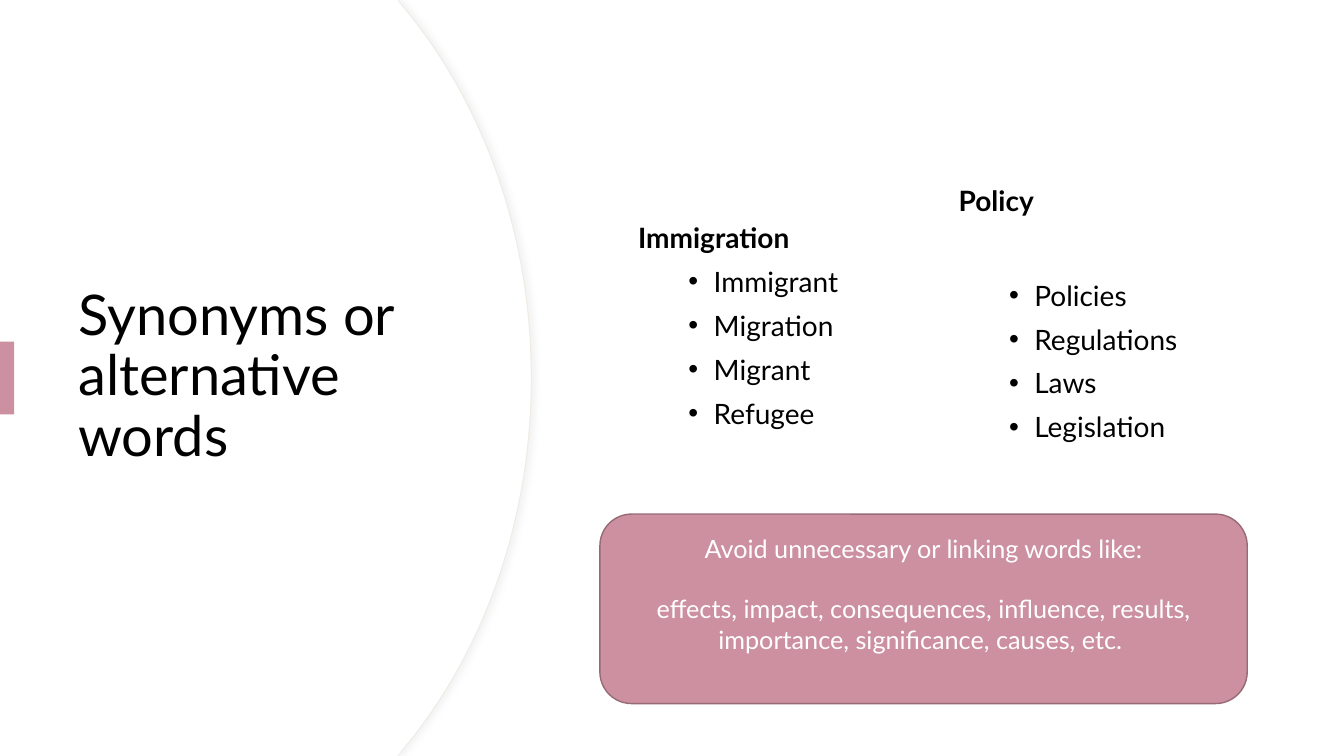
from dataclasses import dataclass

from lxml.etree import SubElement
from pptx import Presentation
from pptx.dml.color import RGBColor
from pptx.enum.shapes import MSO_SHAPE
from pptx.enum.text import MSO_ANCHOR, PP_ALIGN
from pptx.oxml.ns import qn
from pptx.shapes.autoshape import Shape
from pptx.slide import Slide
from pptx.text.text import TextFrame, _Paragraph
from pptx.util import Inches, Pt


@dataclass(frozen=True)
class Theme:
    font: str = "Lato"
    ink: str = "000000"
    paper: str = "FFFFFF"
    rose: str = "CC90A0"
    rose_edge: str = "976B76"
    arc_edge: str = "F0EBE4"
    arc_shadow: str = "D9D9D9"
    title_size: int = 40
    list_size: int = 20
    callout_size: int = 18


@dataclass(frozen=True)
class WordList:
    left: float
    top: float
    heading: str
    words: tuple[str, ...]
    first_gap: float
    bottom_inset: float


@dataclass(frozen=True)
class Panel:
    left: float
    top: float
    width: float
    height: float
    fill: str


THEME = Theme()
SLIDE_WIDTH = 13.33
SLIDE_HEIGHT = 7.5
BACKDROP = Panel(0, 0, SLIDE_WIDTH, SLIDE_HEIGHT, THEME.paper)
ACCENT = Panel(0, 3.39, 0.14, 0.72, THEME.rose)
WORD_LISTS = (
    WordList(6.23, 1.12, "Immigration",
             ("Immigrant", "Migration", "Migrant", "Refugee"), 5, 0.42),
    WordList(9.41, 1.22, "Policy",
             ("Policies", "Regulations", "Laws", "Legislation"), 41, 0.85),
)


def paint(shape: Shape, fill: str, line: str | None = None, width: float = 0.75) -> None:
    shape.shadow.inherit = False
    shape.fill.solid()
    shape.fill.fore_color.rgb = RGBColor.from_string(fill)
    if line:
        shape.line.color.rgb = RGBColor.from_string(line)
        shape.line.width = Pt(width)
    else:
        shape.line.fill.background()


def write(para: _Paragraph, text: str, *, size: float, color: str = THEME.ink,
          bold: bool = False, align: PP_ALIGN = PP_ALIGN.LEFT,
          spacing: float = 1.0, before: float = 0) -> None:
    para.alignment = align
    para.line_spacing = spacing
    para.space_before = Pt(before)
    span = para.add_run()
    span.text = text
    span.font.name = THEME.font
    span.font.size = Pt(size)
    span.font.bold = bold
    span.font.color.rgb = RGBColor.from_string(color)


def prepare_frame(shape: Shape, bottom_inset: float = 0.05) -> TextFrame:
    frame = shape.text_frame
    frame.word_wrap = True
    frame.vertical_anchor = MSO_ANCHOR.MIDDLE
    frame.margin_bottom = Inches(bottom_inset)
    return frame


def add_bullet(para: _Paragraph) -> None:
    properties = para._p.get_or_add_pPr()
    properties.set("lvl", "1")
    properties.set("marL", str(Inches(0.75)))
    properties.set("indent", str(Inches(-0.25)))
    SubElement(properties, qn("a:buFont")).set("typeface", "Arial")
    SubElement(properties, qn("a:buChar")).set("char", "•")


def add_soft_shadow(shape: Shape) -> None:
    effects = shape._element.spPr.find(qn("a:effectLst"))
    shadow = SubElement(effects, qn("a:outerShdw"), blurRad=str(Pt(4)),
                        dist=str(Pt(3)), dir="0", algn="l", rotWithShape="0")
    color = SubElement(shadow, qn("a:srgbClr"), val=THEME.arc_shadow)
    SubElement(color, qn("a:alpha"), val="30000")


def bend(shape: Shape, first: int, count: int) -> None:
    lines = list(shape._element.iter(qn("a:lnTo")))
    for start in range(first, first + 3 * count, 3):
        group = lines[start:start + 3]
        outline = group[0].getparent()
        curve = outline.makeelement(qn("a:cubicBezTo"), {})
        outline.insert(outline.index(group[0]), curve)
        for line in group:
            curve.append(line[0])
            outline.remove(line)


def add_arc_panel(slide: Slide, reach: float) -> Shape:
    upper = [(3.94, 0), (reach - 1.26, 0.08), (reach - 0.48, 1.02), (reach, 2.32)]
    lower = [(x, SLIDE_HEIGHT - y) for x, y in reversed(upper)]
    outline = upper + [(reach, SLIDE_HEIGHT / 2)] + lower + [(0, SLIDE_HEIGHT)]
    builder = slide.shapes.build_freeform(0, 0)
    builder.add_line_segments([(Inches(x), Inches(y)) for x, y in outline], close=True)
    panel = builder.convert_to_shape()
    bend(panel, 2, 2)
    return panel


def add_panel(slide: Slide, panel: Panel) -> None:
    shape = slide.shapes.add_shape(MSO_SHAPE.RECTANGLE, Inches(panel.left), Inches(panel.top),
                                   Inches(panel.width), Inches(panel.height))
    paint(shape, panel.fill)


def add_title(slide: Slide) -> None:
    box = slide.shapes.add_textbox(Inches(0.68), Inches(1.27), Inches(3.94), Inches(4.95))
    write(prepare_frame(box).paragraphs[0], "Synonyms or alternative words",
          size=THEME.title_size, spacing=0.9)


def add_word_list(slide: Slide, item: WordList) -> None:
    box = slide.shapes.add_textbox(Inches(item.left), Inches(item.top),
                                   Inches(2.61), Inches(4.55))
    frame = prepare_frame(box, item.bottom_inset)
    write(frame.paragraphs[0], item.heading, size=THEME.list_size,
          bold=True, spacing=1.1, before=10)
    for index, word in enumerate(item.words):
        para = frame.add_paragraph()
        write(para, word, size=THEME.list_size, spacing=1.1,
              before=5 if index else item.first_gap)
        add_bullet(para)


def add_callout(slide: Slide) -> None:
    box = slide.shapes.add_shape(MSO_SHAPE.ROUNDED_RECTANGLE, Inches(5.95), Inches(5.1),
                                 Inches(6.42), Inches(1.88))
    paint(box, THEME.rose, THEME.rose_edge, 1)
    frame = prepare_frame(box, 0.35)
    style = {"size": THEME.callout_size, "color": THEME.paper, "align": PP_ALIGN.CENTER}
    write(frame.paragraphs[0], "Avoid unnecessary or linking words like:", **style)
    write(frame.add_paragraph(),
          "effects, impact, consequences, influence, results, "
          "importance, significance, causes, etc. ", before=21.6, **style)


def main() -> None:
    deck = Presentation()
    deck.slide_width = Inches(SLIDE_WIDTH)
    deck.slide_height = Inches(SLIDE_HEIGHT)
    slide = deck.slides.add_slide(deck.slide_layouts[6])

    add_panel(slide, BACKDROP)
    edge_panel = add_arc_panel(slide, 5.27)
    paint(edge_panel, THEME.paper, THEME.arc_edge)
    add_soft_shadow(edge_panel)
    paint(add_arc_panel(slide, 5.26), THEME.paper)

    add_title(slide)
    add_panel(slide, ACCENT)
    for item in WORD_LISTS:
        add_word_list(slide, item)
    add_callout(slide)
    deck.save("out.pptx")


if __name__ == "__main__":
    main()
